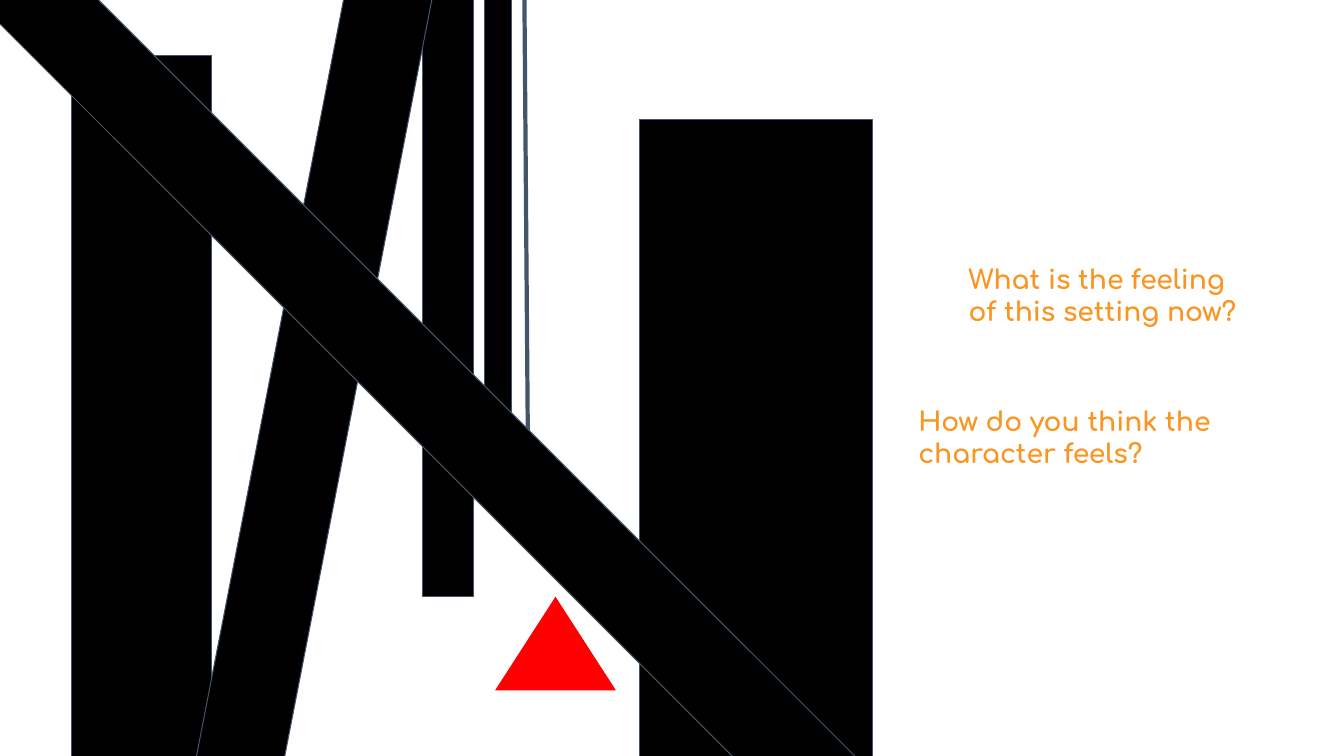
from pptx import Presentation
from pptx.dml.color import RGBColor
from pptx.enum.shapes import MSO_CONNECTOR, MSO_SHAPE
from pptx.enum.text import MSO_AUTO_SIZE
from pptx.oxml.ns import qn
from pptx.util import Inches, Pt
from lxml import etree

BLACK, SLATE, RED, AMBER = "000000", "44546A", "FF0000", "F99520"


def color(code):
    return RGBColor.from_string(code)


def add_text(text, left, top, width=8, height=0.84, size=19, font="Comfortaa",
             fill=AMBER, bold=True):
    box = slide.shapes.add_textbox(Inches(left), Inches(top), Inches(width), Inches(height))
    frame = box.text_frame
    frame.word_wrap = True
    frame.auto_size = MSO_AUTO_SIZE.SHAPE_TO_FIT_TEXT
    frame.margin_left = frame.margin_right = Inches(0.1)
    frame.margin_top = frame.margin_bottom = Inches(0.1)
    frame.text = text
    for para in frame.paragraphs:
        for run in para.runs:
            run.font.size = Pt(size)
            run.font.name = font
            run.font.bold = bold
            run.font.color.rgb = color(fill)


deck = Presentation()
deck.slide_width, deck.slide_height = Inches(13.33), Inches(7.5)
slide = deck.slides.add_slide(deck.slide_layouts[6])

# Thin string behind the trees
string = slide.shapes.add_connector(
    MSO_CONNECTOR.STRAIGHT, Inches(5.19), Inches(-1.5), Inches(5.24), Inches(4.95))
string.line.color.rgb = color(SLATE)
string.line.width = Pt(3)
etree.SubElement(string._element.spPr, qn("a:effectLst"))

# Upright trunks, then the two leaning ones: left, top, width, height, angle
trunks = [
    (0.71, 0.55, 1.39, 7.5, 0),
    (4.19, -0.69, 0.51, 6.61, 0),
    (6.34, 1.19, 2.31, 7.68, 0),
    (4.81, -1.66, 0.26, 6.48, 0),
    (2.84, -2.88, 0.86, 11.68, 11),
    (3.69, -2.09, 0.86, 11.68, 315),
]
for *place, angle in trunks:
    trunk = slide.shapes.add_shape(MSO_SHAPE.RECTANGLE, *map(Inches, place))
    trunk.rotation = angle
    trunk.shadow.inherit = False
    trunk.fill.solid()
    trunk.fill.fore_color.rgb = color(BLACK)
    trunk.line.color.rgb = color(SLATE)
    trunk.line.width = Pt(0.75)

# Red triangle character
hero = slide.shapes.add_shape(
    MSO_SHAPE.ISOSCELES_TRIANGLE, Inches(4.91), Inches(5.92), Inches(1.2), Inches(0.93))
hero.shadow.inherit = False
hero.fill.solid()
hero.fill.fore_color.rgb = color(RED)
hero.line.fill.background()

# Questions
add_text("What is the feeling\nof this setting now?", left=9.51, top=2.51)
add_text("How do you think the\ncharacter feels?", left=9.01, top=3.92)

deck.save("out.pptx")
